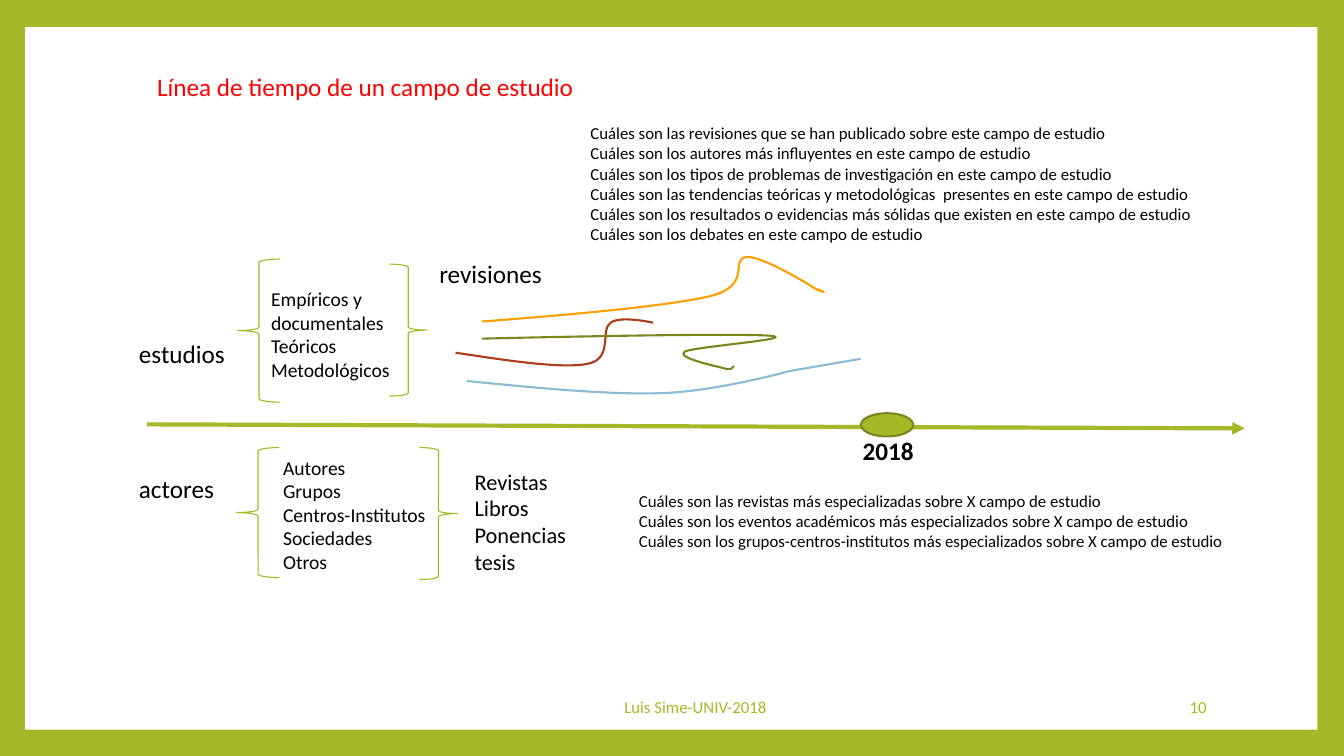
from dataclasses import dataclass

from lxml import etree
from pptx import Presentation
from pptx import util as u
from pptx.dml.color import RGBColor
from pptx.enum import shapes, text
from pptx.oxml.ns import qn

PX = 9144


@dataclass(frozen=True)
class Theme:
    """Colours, type sizes and line widths of the slide."""

    font: str = "Calibri"
    green: str = "A6B727"
    olive: str = "7B871D"
    rust: str = "AB3C19"
    blue: str = "8ABAD4"
    orange: str = "FE9E00"
    red: str = "FF0000"
    black: str = "000000"
    white: str = "FFFFFF"
    heading: int = 18
    media: int = 16
    items: int = 14
    small: int = 12
    axis: float = 3
    curve: float = 1.5
    brace: float = 0.79


THEME = Theme()

BRACES = [
    (shapes.MSO_SHAPE.LEFT_BRACE, (236, 257, 42, 142)),
    (shapes.MSO_SHAPE.RIGHT_BRACE, (386, 262, 38, 131)),
    (shapes.MSO_SHAPE.LEFT_BRACE, (235, 444, 42, 129)),
    (shapes.MSO_SHAPE.RIGHT_BRACE, (416, 444, 38, 131)),
]

HEADINGS = [
    ("2018", (846, 427, 72, 40), {"bold": True}),
    ("Línea de tiempo de un campo de estudio", (146, 66, 441, 40), {"color": THEME.red}),
    ("estudios", (128, 331, 108, 40), {}),
    ("actores", (128, 465, 97, 40), {}),
    ("revisiones", (426, 251, 124, 40), {}),
]

LISTS = [
    ("Empíricos y documentales\nTeóricos\nMetodológicos",
     (259, 280, 222, 104), {"size": THEME.items, "wrap": True}),
    ("Autores\nGrupos\nCentros-Institutos\nSociedades\nOtros",
     (271, 447, 167, 128), {"size": THEME.items}),
    ("Revistas\nLibros\nPonencias\ntesis",
     (461, 459, 114, 118), {"size": THEME.media}),
    ("Cuáles son las revistas más especializadas sobre X campo de estudio\n"
     "Cuáles son los eventos académicos más especializados sobre X campo de estudio\n"
     "Cuáles son los grupos-centros-institutos más especializados sobre X campo de estudio",
     (624, 482, 614, 71), {"size": THEME.small}),
    ("Cuáles son las revisiones que se han publicado sobre este campo de estudio\n"
     "Cuáles son los autores más influyentes en este campo de estudio\n"
     "Cuáles son los tipos de problemas de investigación en este campo de estudio\n"
     "Cuáles son las tendencias teóricas y metodológicas  presentes en este campo de estudio\n"
     "Cuáles son los resultados o evidencias más sólidas que existen en este campo de estudio\n"
     "Cuáles son los debates en este campo de estudio",
     (576, 117, 627, 172), {"size": THEME.small}),
]

CURVES = [
    (THEME.rust, (452, 317, 196, 46), [
        (452, 350), (505, 358), (558, 366), (583, 361),
        (609, 356), (595, 327), (606, 320),
        (616, 313), (647, 320), (647, 320), (648, 320),
    ]),
    (THEME.blue, (463, 356, 391, 35), [
        (463, 378), (534, 385), (605, 392), (658, 390),
        (712, 388), (784, 368), (784, 368), (854, 356),
    ]),
    (THEME.orange, (478, 255, 340, 64), [
        (478, 319), (569, 312), (660, 304), (704, 294),
        (748, 283), (723, 257), (741, 255),
        (758, 254), (810, 287), (810, 287),
        (822, 292), (817, 289), (811, 287),
    ]),
    (THEME.olive, (478, 332, 292, 34), [
        (478, 336), (604, 333), (729, 331), (763, 333),
        (797, 336), (687, 344), (679, 349),
        (671, 355), (709, 363), (717, 365),
        (726, 368), (727, 365), (728, 363),
    ]),
]


def emu(lengths):
    """Turn px lengths into EMU."""
    return [u.Emu(length * PX) for length in lengths]


def style(shape, fill=None, line=None, width=THEME.curve):
    """Set the fill and outline of a shape and remove its shadow."""
    shape.shadow.inherit = False
    if fill:
        shape.fill.solid()
        shape.fill.fore_color.rgb = RGBColor.from_string(fill)
    else:
        shape.fill.background()
    if line:
        shape.line.color.rgb = RGBColor.from_string(line)
        shape.line.width = u.Pt(width)
    else:
        shape.line.fill.background()


def add_preset(slide, kind, box, **look):
    """Add a styled preset shape."""
    style(slide.shapes.add_shape(kind, *emu(box)), **look)


def add_text(slide, content, box, size=THEME.heading, color=THEME.black, bold=False,
             wrap=False, grow=True, align=text.PP_ALIGN.LEFT, anchor=text.MSO_ANCHOR.TOP):
    """Add a text box with one paragraph per line of content."""
    frame = slide.shapes.add_textbox(*emu(box)).text_frame
    frame.word_wrap = wrap
    frame.auto_size = text.MSO_AUTO_SIZE.SHAPE_TO_FIT_TEXT if grow else text.MSO_AUTO_SIZE.NONE
    frame.vertical_anchor = anchor
    frame.text = content
    for paragraph in frame.paragraphs:
        paragraph.alignment = align
        for run in paragraph.runs:
            run.font.name = THEME.font
            run.font.size = u.Pt(size)
            run.font.bold = bold
            run.font.color.rgb = RGBColor.from_string(color)


def add_arrow(slide, start, end):
    """Add the time axis with an arrowhead at its end."""
    arrow = slide.shapes.add_connector(shapes.MSO_CONNECTOR.STRAIGHT, *emu(start + end))
    arrow.line.color.rgb = RGBColor.from_string(THEME.green)
    arrow.line.width = u.Pt(THEME.axis)
    properties = arrow._element.spPr
    etree.SubElement(properties.get_or_add_ln(), qn("a:tailEnd"), type="triangle")
    etree.SubElement(properties, qn("a:effectLst"))


def add_curve(slide, color, box, points):
    """Add an open curve of cubic segments, with a straight end if one point is left."""
    builder = slide.shapes.build_freeform(*emu(points[0]))
    builder.add_line_segments([emu(point) for point in points[1:]], close=False)
    shape = builder.convert_to_shape()
    left, top, width, height = emu(box)
    outline = next(shape._element.iter(qn("a:path")))
    for point in outline.iter(qn("a:pt")):
        point.set("x", str(int(point.get("x")) + shape.left - left))
        point.set("y", str(int(point.get("y")) + shape.top - top))
    outline.set("w", str(width))
    outline.set("h", str(height))
    shape.left, shape.top, shape.width, shape.height = left, top, width, height
    steps = outline.findall(qn("a:lnTo"))
    for first, second, third in zip(steps[::3], steps[1::3], steps[2::3]):
        cubic = etree.Element(qn("a:cubicBezTo"))
        first.addprevious(cubic)
        for step in (first, second, third):
            cubic.append(step[0])
            outline.remove(step)
    style(shape, line=color)


def main():
    """Build the slide and save it."""
    presentation = Presentation()
    presentation.slide_height = u.Emu(750 * PX)
    presentation.slide_width = u.Emu(presentation.slide_height * 16 // 9)
    slide = presentation.slides.add_slide(presentation.slide_layouts[6])
    slide.background.fill.solid()
    slide.background.fill.fore_color.rgb = RGBColor.from_string(THEME.green)
    add_preset(slide, shapes.MSO_SHAPE.RECTANGLE, (25, 27, 1282, 697), fill=THEME.white)

    add_arrow(slide, (146, 421), (1235, 425))
    for kind, box in BRACES:
        add_preset(slide, kind, box, line=THEME.green, width=THEME.brace)
    for content, box, look in HEADINGS + LISTS:
        add_text(slide, content, box, **look)
    for color, box, points in CURVES:
        add_curve(slide, color, box, points)
    add_preset(slide, shapes.MSO_SHAPE.OVAL, (854, 410, 52, 23),
               fill=THEME.green, line=THEME.olive)

    footer = {"size": THEME.small, "color": THEME.green, "wrap": True, "grow": False,
              "anchor": text.MSO_ANCHOR.MIDDLE}
    add_text(slide, "10", (1020, 681, 187, 40), align=text.PP_ALIGN.RIGHT, **footer)
    add_text(slide, "Luis Sime-UNIV-2018", (432, 681, 516, 40),
             align=text.PP_ALIGN.CENTER, **footer)
    presentation.save("out.pptx")


if __name__ == "__main__":
    main()
